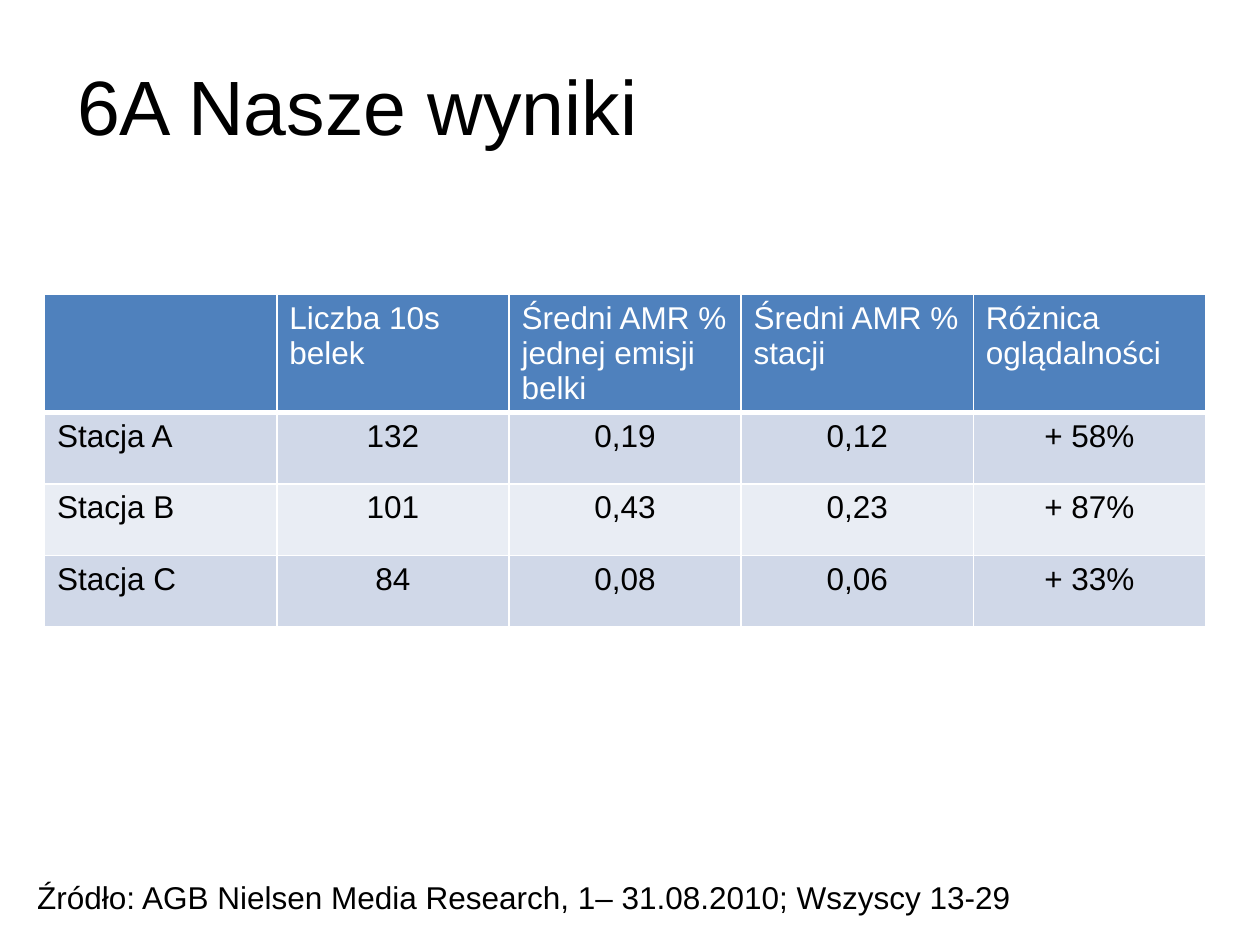
from lxml import etree
from pptx import Presentation
from pptx.dml.color import RGBColor
from pptx.enum.text import MSO_ANCHOR, PP_ALIGN
from pptx.oxml.ns import qn
from pptx.util import Cm, Pt

LEFT, CENTER = PP_ALIGN.LEFT, PP_ALIGN.CENTER
MIDDLE = MSO_ANCHOR.MIDDLE
FONT = "Arial"
COLORS = {
    "text": "000000",
    "white": "FFFFFF",
    "header": "4F81BD",
    "odd": "D0D8E8",
    "even": "E9EDF4",
}
ROWS = [
    ["", "Liczba 10s belek", "Średni AMR % jednej emisji belki",
     "Średni AMR % stacji", "Różnica oglądalności"],
    ["Stacja A", "132", "0,19", "0,12", "+ 58%"],
    ["Stacja B", "101", "0,43", "0,23", "+ 87%"],
    ["Stacja C", "84", "0,08", "0,06", "+ 33%"],
]


def format_paragraph(para, size, color, align=LEFT):
    para.alignment = align
    para.font.name = FONT
    para.font.size = Pt(size)
    para.font.color.rgb = RGBColor.from_string(COLORS[color])


def add_border(cell, side, width):
    line = etree.SubElement(cell._tc.get_or_add_tcPr(), qn(f"a:{side}"), w=str(Pt(width)))
    fill = etree.SubElement(line, qn("a:solidFill"))
    etree.SubElement(fill, qn("a:srgbClr"), val=COLORS["white"])


deck = Presentation()
deck.slide_width, deck.slide_height = Cm(25.4), Cm(19.05)
page = deck.slides.add_slide(deck.slide_layouts[5])

# Title
title = page.shapes.title
title.left, title.top, title.width, title.height = Cm(1.3), Cm(0.53), Cm(22.86), Cm(3.18)
title.text_frame.text = "6A Nasze wyniki"
title.text_frame.vertical_anchor = MIDDLE
format_paragraph(title.text_frame.paragraphs[0], 44, "text")

# Results table
table = page.shapes.add_table(
    len(ROWS), len(ROWS[0]), Cm(0.9), Cm(5.93), Cm(23.4), Cm(6.4)).table
for column in table.columns:
    column.width = Cm(4.68)
for row_index, values in enumerate(ROWS):
    is_header = row_index == 0
    table.rows[row_index].height = Cm(2.08 if is_header else 1.44)
    band = "header" if is_header else "odd" if row_index % 2 else "even"
    for column_index, value in enumerate(values):
        cell = table.cell(row_index, column_index)
        cell.text = value
        para = cell.text_frame.paragraphs[0]
        align = LEFT if is_header or column_index == 0 else CENTER
        format_paragraph(para, 18, "white" if is_header else "text", align)
        para.font.bold = False
        for side in ("lnL", "lnR", "lnT", "lnB"):
            thick = (row_index, side) in ((0, "lnB"), (1, "lnT"))
            add_border(cell, side, 3 if thick else 1)
        cell.fill.solid()
        cell.fill.fore_color.rgb = RGBColor.from_string(COLORS[band])

# Source line
box = page.shapes.add_textbox(Cm(0.5), Cm(17.73), Cm(24), Cm(1))
box.text_frame.word_wrap = True
para = box.text_frame.paragraphs[0]
para.text = "Źródło: AGB Nielsen Media Research, 1– 31.08.2010; Wszyscy 13-29"
para.line_spacing = 0.8
format_paragraph(para, 18, "text")

deck.save("out.pptx")
